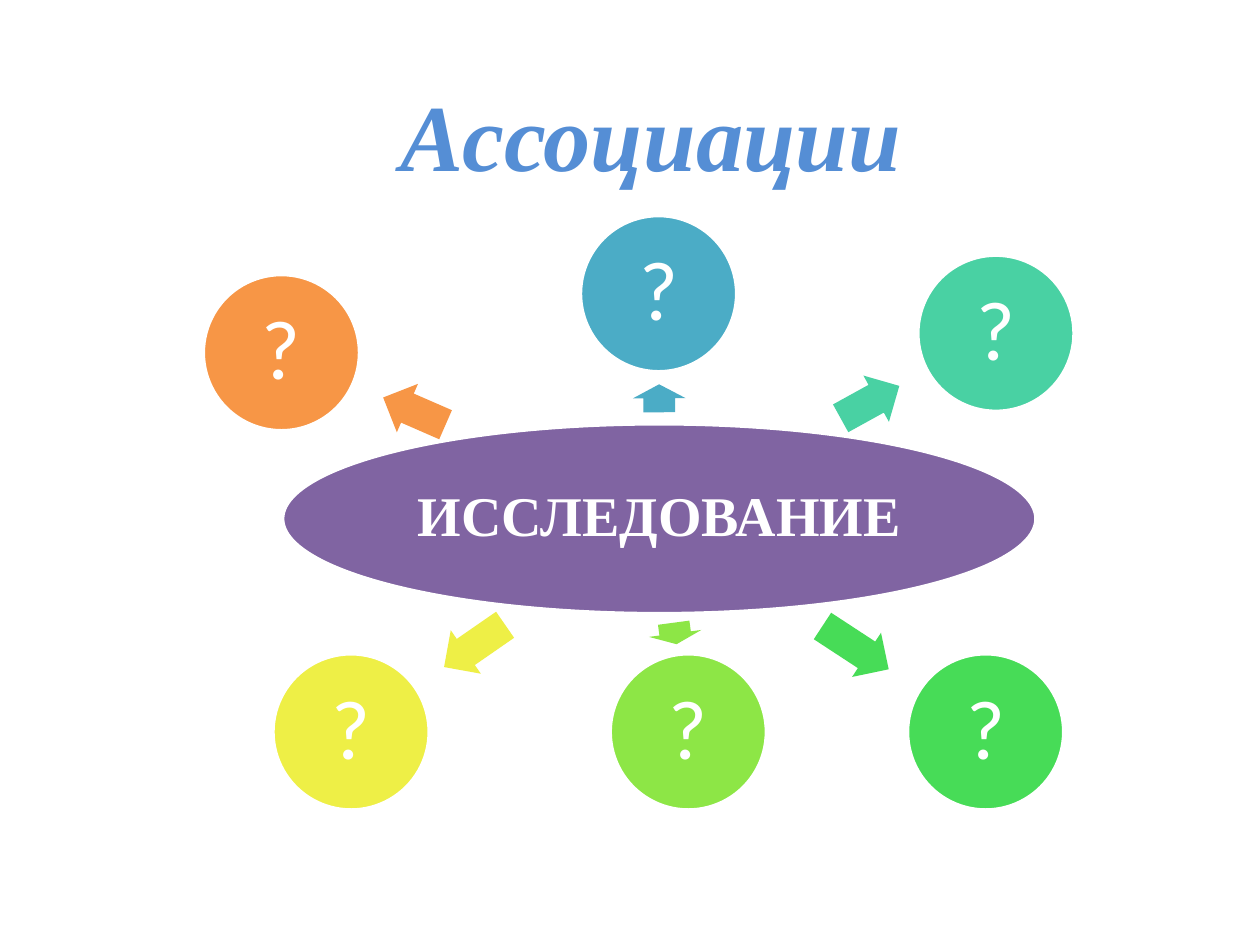
from pptx import Presentation
from pptx.dml.color import RGBColor
from pptx.enum.shapes import MSO_SHAPE
from pptx.enum.text import MSO_ANCHOR, PP_ALIGN
from pptx.util import Pt

OVAL = MSO_SHAPE.OVAL
ARROW = MSO_SHAPE.RIGHT_ARROW
MIDDLE = MSO_ANCHOR.MIDDLE
CENTER = PP_ALIGN.CENTER
CIRCLE_SIZE = 89.3
ARROW_HEIGHT = 30.2


def add_filled(kind, bounds, color):
    shape = slide.shapes.add_shape(kind, *map(Pt, bounds))
    shape.shadow.inherit = False
    shape.fill.solid()
    shape.fill.fore_color.rgb = RGBColor.from_string(color)
    if kind == OVAL:
        shape.line.color.rgb = RGBColor.from_string("FFFFFF")
        shape.line.width = Pt(2)
    else:
        shape.line.fill.background()
    return shape


def write_text(shape, text, color, margin, spacing, font_format):
    frame = shape.text_frame
    frame.word_wrap = True
    frame.vertical_anchor = MIDDLE
    for side in ("left", "right", "top", "bottom"):
        setattr(frame, f"margin_{side}", Pt(margin))
    para = frame.paragraphs[0]
    para.alignment = CENTER
    para.line_spacing = spacing
    span = para.add_run()
    span.text = text
    span.font.color.rgb = RGBColor.from_string(color)
    for name, value in font_format.items():
        setattr(span.font, name, value)


deck = Presentation()
deck.slide_width, deck.slide_height = Pt(720), Pt(540)
slide = deck.slides.add_slide(deck.slide_layouts[6])

title_format = {"name": "Times New Roman", "size": Pt(54), "bold": True, "italic": True}
topic_format = {"name": "Times New Roman", "size": Pt(32), "bold": True}
question_format = {"name": "Calibri", "size": Pt(48)}

title = slide.shapes.add_textbox(Pt(48), Pt(31.5), Pt(648), Pt(90))
write_text(title, "Ассоциации", "558ED5", 4, 1.0, title_format)

topic = add_filled(OVAL, (161.5, 242.2, 430.5, 108.5), "8064A2")
write_text(topic, "ИССЛЕДОВАНИЕ", "FFFFFF", 3, 0.9, topic_format)

associations = [
    ("4BACC6", (331.7, 123.2), (368.7, 212.5, 16), 269.7),
    ("49D1A3", (524.5, 145.8), (478, 214.7, 38.3), 331.1),
    ("47DC57", (518.6, 373.6), (466.3, 355, 45.2), 33.2),
    ("8DE646", (348.7, 373.6), (379.6, 346.9, 12.4), 82.4),
    ("EEEF46", (156, 373.6), (250, 354, 42.4), 145.3),
    ("F79646", (116.2, 156.9), (217.3, 219.8, 38.9), 203.6),
]
for color, circle_corner, (left, top, width), angle in associations:
    arrow = add_filled(ARROW, (left, top, width, ARROW_HEIGHT), color)
    arrow.adjustments[0] = 0.6
    arrow.adjustments[1] = 0.5
    arrow.rotation = angle
    circle = add_filled(OVAL, (*circle_corner, CIRCLE_SIZE, CIRCLE_SIZE), color)
    write_text(circle, "?", "FFFFFF", 5, 0.9, question_format)

deck.save("out.pptx")
